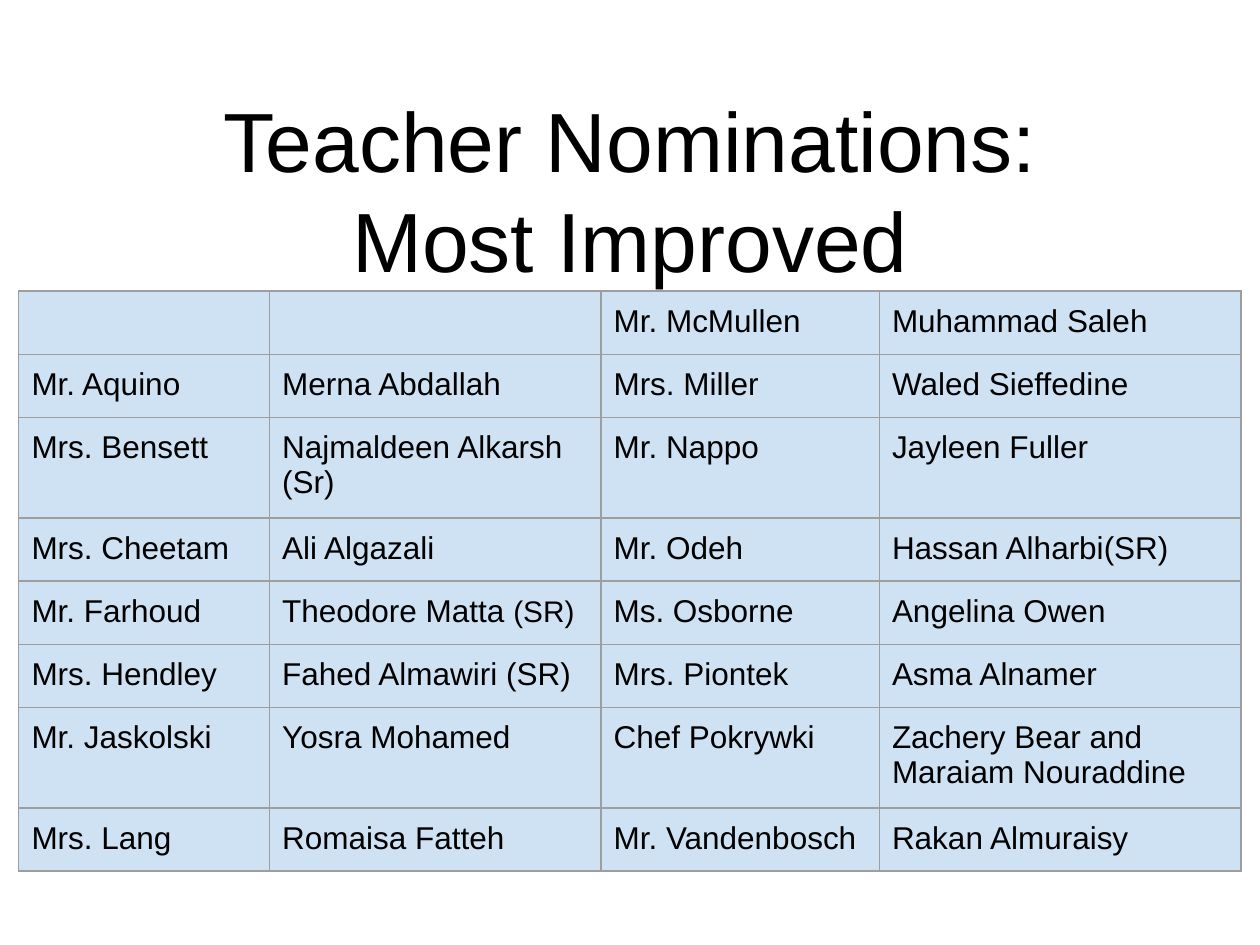
import pptx
import pptx.dml.color
import pptx.enum.text
import pptx.oxml
import pptx.oxml.ns
import pptx.util

Inches, Pt = pptx.util.Inches, pptx.util.Pt
BLACK = pptx.dml.color.RGBColor(0x00, 0x00, 0x00)
PALE_BLUE = pptx.dml.color.RGBColor(0xCF, 0xE2, 0xF3)
GREY = pptx.dml.color.RGBColor(0x9E, 0x9E, 0x9E)
FONT = "Arial"

HEADING = ["Teacher Nominations:", "Most Improved"]
COLUMN_WIDTHS = [1.99, 2.63, 2.21, 2.87]
ROW_HEIGHT = 0.42
# A cell holding a tuple has a second, slightly smaller run.
NOMINATIONS = [
    ["", "", "Mr. McMullen", "Muhammad Saleh"],
    ["Mr. Aquino", "Merna Abdallah", "Mrs. Miller", "Waled Sieffedine"],
    ["Mrs. Bensett", "Najmaldeen Alkarsh (Sr)", "Mr. Nappo", "Jayleen Fuller"],
    ["Mrs. Cheetam", "Ali Algazali", "Mr. Odeh", "Hassan Alharbi(SR)"],
    ["Mr. Farhoud", ("Theodore Matta ", "(SR)"), "Ms. Osborne", "Angelina Owen"],
    ["Mrs. Hendley", "Fahed Almawiri (SR)", "Mrs. Piontek", "Asma Alnamer"],
    ["Mr. Jaskolski", "Yosra Mohamed", "Chef Pokrywki",
     "Zachery Bear and Maraiam Nouraddine"],
    ["Mrs. Lang", "Romaisa Fatteh", "Mr. Vandenbosch", "Rakan Almuraisy"],
]


def style_run(run, size):
    run.font.name = FONT
    run.font.size = Pt(size)
    run.font.color.rgb = BLACK


def add_heading(slide, left, top, width, height):
    heading = slide.shapes.add_textbox(
        Inches(left), Inches(top), Inches(width), Inches(height))
    frame = heading.text_frame
    frame.word_wrap = True
    frame.margin_top = Inches(0.07)
    frame.text = "\n".join(HEADING)
    for line in frame.paragraphs:
        line.alignment = pptx.enum.text.PP_ALIGN.CENTER
        line.line_spacing = Pt(57.2)
        style_run(line.runs[0], 48)


def add_borders(cell):
    """Draw all four edges; they must come before the cell's fill in the XML."""
    properties = cell._tc.get_or_add_tcPr()
    for position, edge in enumerate(("lnL", "lnR", "lnT", "lnB")):
        border = pptx.oxml.parse_xml(
            f'<a:{edge} {pptx.oxml.ns.nsdecls("a")} w="{Pt(0.75)}">'
            f'<a:solidFill><a:srgbClr val="{GREY}"/></a:solidFill></a:{edge}>')
        properties.insert(position, border)


def fill_cell(cell, content):
    cell.margin_left = cell.margin_right = Inches(0.1)
    cell.margin_top = cell.margin_bottom = Inches(0.1)
    cell.fill.solid()
    cell.fill.fore_color.rgb = PALE_BLUE
    add_borders(cell)
    parts = content if isinstance(content, tuple) else (content,)
    for part, size in zip(parts, (18, 17)):
        if part:
            run = cell.text_frame.paragraphs[0].add_run()
            run.text = part
            style_run(run, size)


def add_nominations(slide, left, top):
    table = slide.shapes.add_table(
        len(NOMINATIONS), len(COLUMN_WIDTHS), Inches(left), Inches(top),
        Inches(sum(COLUMN_WIDTHS)), Inches(ROW_HEIGHT * len(NOMINATIONS))).table
    table.first_row = table.horz_banding = False
    for column, width in zip(table.columns, COLUMN_WIDTHS):
        column.width = Inches(width)
    for row, contents in zip(table.rows, NOMINATIONS):
        row.height = Inches(ROW_HEIGHT)
        for cell, content in zip(row.cells, contents):
            fill_cell(cell, content)


def main():
    deck = pptx.Presentation()
    deck.slide_width, deck.slide_height = Inches(10), Inches(7.5)
    slide = deck.slides.add_slide(deck.slide_layouts[6])
    add_heading(slide, 0.04, 0.64, 9.92, 2.56)
    add_nominations(slide, 0.15, 2.31)
    deck.save("out.pptx")


if __name__ == "__main__":
    main()
